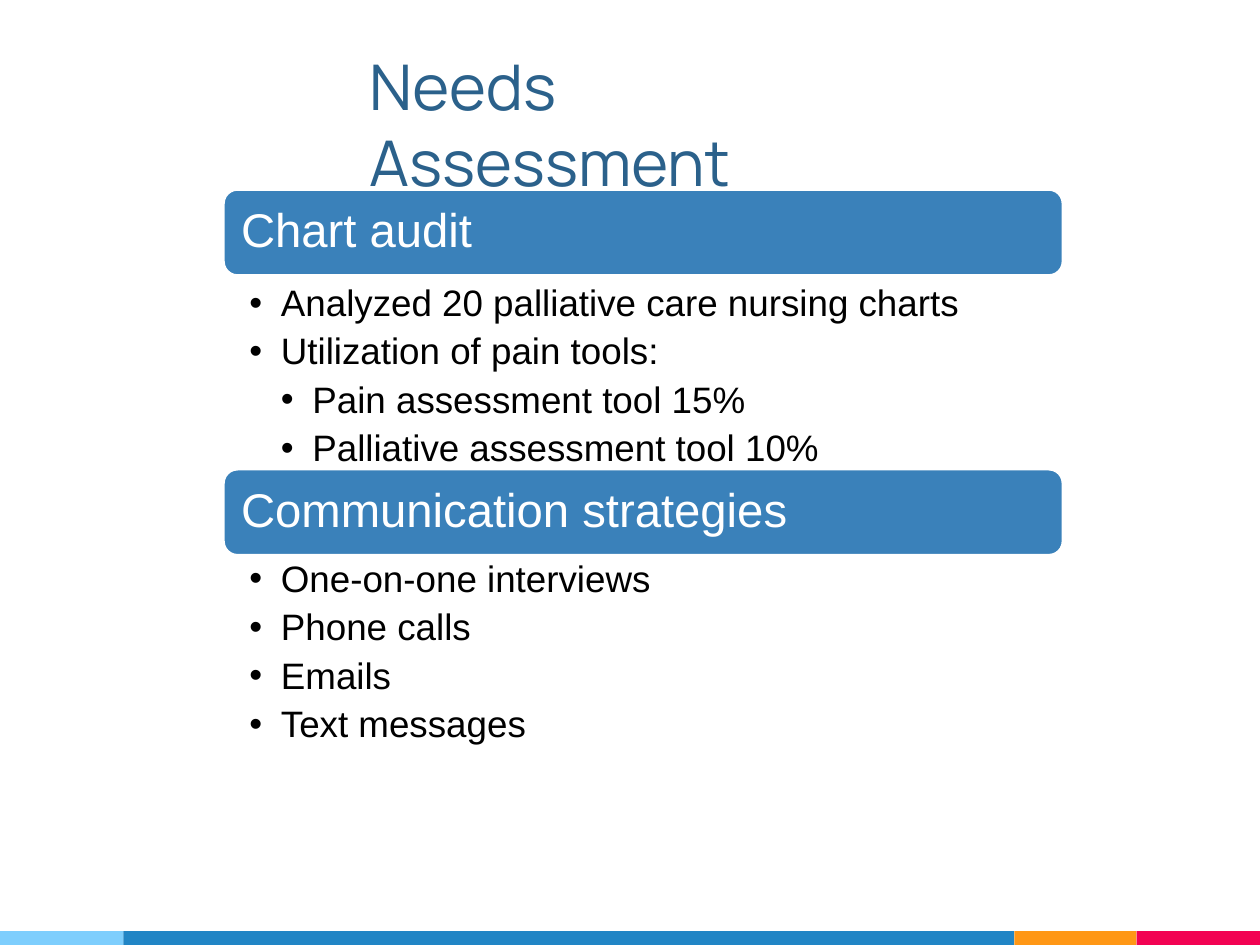
from dataclasses import dataclass

from lxml.etree import SubElement
from pptx import Presentation
from pptx.dml.color import RGBColor
from pptx.enum.shapes import MSO_SHAPE
from pptx.enum.text import MSO_ANCHOR, MSO_AUTO_SIZE, PP_ALIGN
from pptx.oxml.ns import qn
from pptx.slide import Slide
from pptx.text.text import Font, TextFrame, _Paragraph
from pptx.util import Inches, Pt

COLORS = {
    "title": "2B618B", "bar": "3A81BA", "white": "FFFFFF", "black": "000000",
    "sky": "7ECEFD", "blue": "2185C5", "orange": "FF9715", "red": "F20253",
}
SLIDE_WIDTH, SLIDE_HEIGHT = 10, 7.5
STRIP_HEIGHT = 0.11
STRIP_SHARES = {"sky": 0.098, "blue": 0.707, "orange": 0.097, "red": 0.098}
CONTENT_LEFT, CONTENT_TOP, CONTENT_WIDTH = 1.77, 1.5, 6.67
BAR_HEIGHT, LIST_HEIGHT = 0.69, 1.5
SECTION_PITCH = 2.22
INDENT = 0.25


@dataclass(frozen=True)
class Item:
    text: str
    level: int = 1


@dataclass(frozen=True)
class Section:
    heading: str
    list_offset: float
    items: tuple[Item, ...]


SECTIONS = (
    Section("Chart audit", 0.72, (
        Item("Analyzed 20 palliative care nursing charts"),
        Item("Utilization of pain tools:"),
        Item("Pain assessment tool 15%", 2),
        Item("Palliative assessment tool 10%", 2),
    )),
    Section("Communication strategies", 0.69, (
        Item("One-on-one interviews"),
        Item("Phone calls"),
        Item("Emails"),
        Item("Text messages"),
    )),
)


def color(name: str) -> RGBColor:
    return RGBColor.from_string(COLORS[name])


def style_font(font: Font, name: str, size: float, color_name: str) -> None:
    font.name = name
    font.size = Pt(size)
    font.color.rgb = color(color_name)


def set_margins(frame: TextFrame, horizontal: float, vertical: float) -> None:
    frame.margin_left = frame.margin_right = Inches(horizontal)
    frame.margin_top = frame.margin_bottom = Inches(vertical)


def add_bullet(paragraph: _Paragraph, level: int) -> None:
    paragraph.level = level
    properties = paragraph._p.get_or_add_pPr()
    properties.set("marL", str(Inches(INDENT * level)))
    properties.set("indent", str(-Inches(INDENT)))
    SubElement(properties, qn("a:buFont"), typeface="Arial")
    SubElement(properties, qn("a:buChar"), char="•")


def draw_strips(slide: Slide) -> None:
    left = 0.0
    for name, share in STRIP_SHARES.items():
        width = share * SLIDE_WIDTH
        strip = slide.shapes.add_shape(
            MSO_SHAPE.RECTANGLE, Inches(left), Inches(SLIDE_HEIGHT - STRIP_HEIGHT),
            Inches(width), Inches(STRIP_HEIGHT))
        strip.shadow.inherit = False
        strip.fill.solid()
        strip.fill.fore_color.rgb = color(name)
        strip.line.fill.background()
        left += width


def draw_title(slide: Slide, text: str) -> None:
    title = slide.shapes.title
    title.left, title.top = Inches(2.83), Inches(0.33)
    title.width, title.height = Inches(4.55), Inches(0.71)
    frame = title.text_frame
    frame.word_wrap = True
    frame.auto_size = MSO_AUTO_SIZE.NONE
    frame.vertical_anchor = MSO_ANCHOR.TOP
    set_margins(frame, 0.1, 0.05)
    paragraph = frame.paragraphs[0]
    paragraph.alignment = PP_ALIGN.LEFT
    run = paragraph.add_run()
    run.text = text
    style_font(run.font, "Manrope", 36, "title")


def draw_bar(slide: Slide, heading: str, top: float) -> None:
    bar = slide.shapes.add_shape(
        MSO_SHAPE.ROUNDED_RECTANGLE, Inches(CONTENT_LEFT), Inches(top),
        Inches(CONTENT_WIDTH), Inches(BAR_HEIGHT))
    bar.shadow.inherit = False
    bar.fill.solid()
    bar.fill.fore_color.rgb = color("bar")
    bar.line.color.rgb = color("white")
    bar.line.width = Pt(2)
    frame = bar.text_frame
    frame.word_wrap = True
    frame.vertical_anchor = MSO_ANCHOR.MIDDLE
    # The rounded corners add about 0.03 inches of inset of their own.
    set_margins(frame, 0.11, 0.11)
    paragraph = frame.paragraphs[0]
    paragraph.alignment = PP_ALIGN.LEFT
    paragraph.line_spacing = 0.9
    run = paragraph.add_run()
    run.text = heading
    style_font(run.font, "Arial", 27, "white")


def draw_list(slide: Slide, items: tuple[Item, ...], top: float) -> None:
    box = slide.shapes.add_textbox(
        Inches(CONTENT_LEFT), Inches(top), Inches(CONTENT_WIDTH), Inches(LIST_HEIGHT))
    frame = box.text_frame
    frame.word_wrap = True
    set_margins(frame, 0.21, 0.04)
    for index, item in enumerate(items):
        paragraph = frame.add_paragraph() if index else frame.paragraphs[0]
        add_bullet(paragraph, item.level)
        paragraph.line_spacing = 0.9
        paragraph.space_after = Pt(5)
        run = paragraph.add_run()
        run.text = item.text
        style_font(run.font, "Arial", 21, "black")


def main() -> None:
    presentation = Presentation()
    presentation.slide_width = Inches(SLIDE_WIDTH)
    presentation.slide_height = Inches(SLIDE_HEIGHT)
    slide = presentation.slides.add_slide(presentation.slide_layouts[5])
    draw_strips(slide)
    draw_title(slide, "Needs Assessment")
    for index, section in enumerate(SECTIONS):
        top = CONTENT_TOP + index * SECTION_PITCH
        draw_bar(slide, section.heading, top)
        draw_list(slide, section.items, top + section.list_offset)
    presentation.save("out.pptx")


if __name__ == "__main__":
    main()
